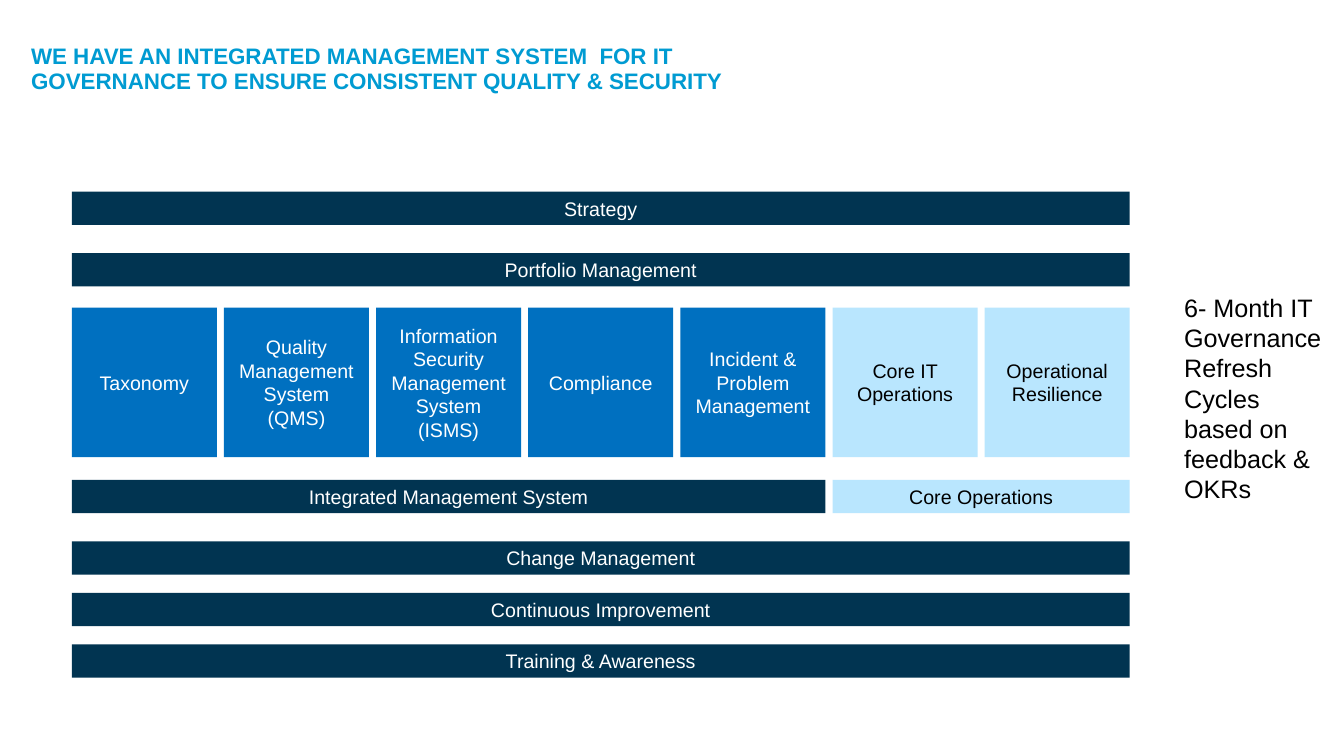
from pptx import Presentation
from pptx.dml.color import RGBColor
from pptx.enum.shapes import MSO_SHAPE
from pptx.enum.text import MSO_ANCHOR, MSO_AUTO_SIZE, PP_ALIGN
from pptx.util import Cm, Pt

RECTANGLE = MSO_SHAPE.RECTANGLE
TOP, MIDDLE = MSO_ANCHOR.TOP, MSO_ANCHOR.MIDDLE
LEFT, CENTER = PP_ALIGN.LEFT, PP_ALIGN.CENTER
NO_AUTOFIT = MSO_AUTO_SIZE.NONE

FONT = "Arial"
COLORS = {
    "heading": "009BD2",
    "navy": "013451",
    "blue": "0070C0",
    "pale": "B9E6FE",
    "white": "FFFFFF",
    "black": "000000",
}
TEXT_ON = {"navy": "white", "blue": "white", "pale": "black"}

HEADING = ("WE HAVE AN INTEGRATED MANAGEMENT SYSTEM  FOR IT GOVERNANCE "
           "TO ENSURE CONSISTENT QUALITY & SECURITY")
REFRESH_NOTE = "6- Month IT Governance Refresh Cycles\nbased on feedback & OKRs"
MANAGED_PILLARS = [
    "Taxonomy",
    "Quality Management System (QMS)",
    "Information Security Management System (ISMS)",
    "Compliance",
    "Incident &\nProblem Management",
]
CORE_PILLARS = ["Core IT Operations", "Operational Resilience"]
DIRECTION_BARS = ["Strategy", "Portfolio Management"]
SUPPORT_BARS = ["Change Management", "Continuous Improvement", "Training & Awareness"]

BAR_HEIGHT = 0.84
PILLAR_HEIGHT = 3.77
PILLAR_GAP = 0.18
DIRECTION_PITCH = 1.55
SUPPORT_PITCH = 1.3
PILLARS_OFFSET = 2.92
GROUPS_OFFSET = 7.26
SUPPORT_OFFSET = 8.81


def write_text(frame, text, size, color, align, anchor, bold=False):
    """Fill a text frame and format all of its runs alike."""
    frame.text = text
    frame.word_wrap = True
    frame.auto_size = NO_AUTOFIT
    frame.vertical_anchor = anchor
    for paragraph in frame.paragraphs:
        paragraph.alignment = align
        for run in paragraph.runs:
            run.font.name = FONT
            run.font.size = Pt(size)
            run.font.bold = bold
            run.font.color.rgb = RGBColor.from_string(COLORS[color])


def add_block(slide, text, fill, left, top, width, height):
    """Add one flat labelled rectangle, measured in centimetres."""
    block = slide.shapes.add_shape(RECTANGLE, Cm(left), Cm(top), Cm(width), Cm(height))
    block.shadow.inherit = False
    block.fill.solid()
    block.fill.fore_color.rgb = RGBColor.from_string(COLORS[fill])
    block.line.fill.background()
    write_text(block.text_frame, text, 14, TEXT_ON[fill], CENTER, MIDDLE)


def add_heading(slide, left, top, width, height):
    """Place the slide heading in the title placeholder."""
    heading = slide.shapes.title
    heading.left, heading.top = Cm(left), Cm(top)
    heading.width, heading.height = Cm(width), Cm(height)
    write_text(heading.text_frame, HEADING, 16, "heading", LEFT, TOP, bold=True)
    heading.text_frame.margin_right = Cm(1.5)
    heading.text_frame.paragraphs[0].line_spacing = 0.9


def add_bars(slide, labels, left, top, width, pitch):
    """Stack full-width bars at an even pitch."""
    for row, label in enumerate(labels):
        add_block(slide, label, "navy", left, top + row * pitch, width, BAR_HEIGHT)


def add_pillars(slide, left, top, width, groups_top):
    """Set the pillars side by side with a group bar under each family."""
    count = len(MANAGED_PILLARS) + len(CORE_PILLARS)
    pitch = (width + PILLAR_GAP) / count
    families = [
        (MANAGED_PILLARS, "blue", "Integrated Management System", "navy"),
        (CORE_PILLARS, "pale", "Core Operations", "pale"),
    ]
    for pillars, pillar_fill, group, group_fill in families:
        for column, pillar in enumerate(pillars):
            add_block(slide, pillar, pillar_fill, left + column * pitch, top,
                      pitch - PILLAR_GAP, PILLAR_HEIGHT)
        span = len(pillars) * pitch
        add_block(slide, group, group_fill, left, groups_top, span - PILLAR_GAP, BAR_HEIGHT)
        left += span


def add_framework(slide, left, top, width):
    """Build the governance framework from direction down to support."""
    add_bars(slide, DIRECTION_BARS, left, top, width, DIRECTION_PITCH)
    add_pillars(slide, left, top + PILLARS_OFFSET, width, top + GROUPS_OFFSET)
    add_bars(slide, SUPPORT_BARS, left, top + SUPPORT_OFFSET, width, SUPPORT_PITCH)


def add_refresh_note(slide, left, top, width, height):
    """Add the note on refresh cycles beside the framework."""
    note = slide.shapes.add_textbox(Cm(left), Cm(top), Cm(width), Cm(height))
    write_text(note.text_frame, REFRESH_NOTE, 18, "black", LEFT, TOP)


def main():
    """Build and save the governance slide."""
    deck = Presentation()
    deck.slide_width, deck.slide_height = Cm(33.88), Cm(19.05)
    slide = deck.slides.add_slide(deck.slide_layouts[5])
    add_heading(slide, 0.53, 1.02, 20.6, 2.92)
    add_framework(slide, 1.81, 4.83, 26.67)
    add_refresh_note(slide, 29.6, 7.24, 4.24, 5.64)
    deck.save("out.pptx")


if __name__ == "__main__":
    main()
